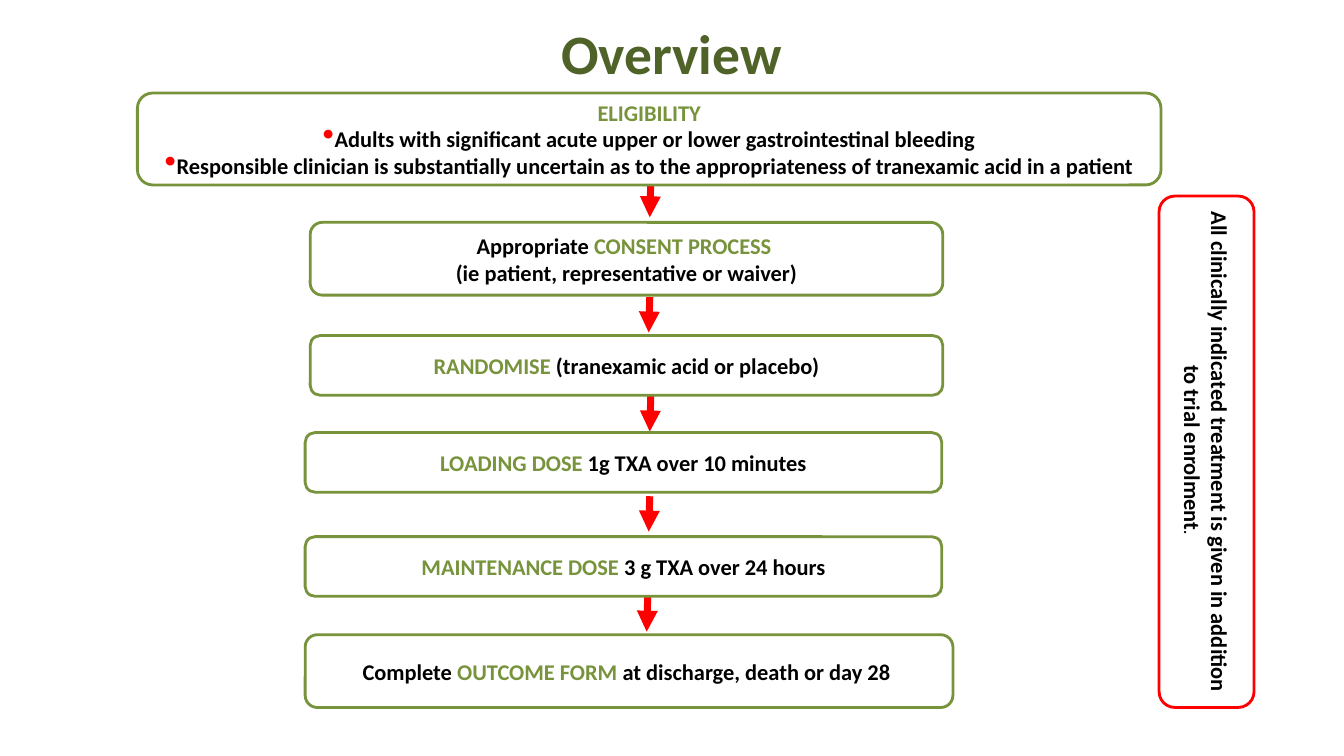
"""Build the trial overview flowchart slide."""
from lxml import etree
from pptx import Presentation, util as u
from pptx.dml.color import RGBColor
from pptx.enum import shapes as s, text as t
from pptx.oxml import ns

GREEN = RGBColor(0x77, 0x93, 0x3C)
DARK = RGBColor(0x4F, 0x62, 0x28)
RED = RGBColor(0xFF, 0, 0)
BLACK = RGBColor(0, 0, 0)
WHITE = RGBColor(0xFF, 0xFF, 0xFF)

deck = Presentation()
deck.slide_width, deck.slide_height = u.Inches(13.3), u.Inches(7.48)
COL, ROW = deck.slide_width / 133, deck.slide_height / 74.8
slide = deck.slides.add_slide(deck.slide_layouts[5])


def write(para, words, size=16, color=BLACK):
    para.alignment = t.PP_ALIGN.CENTER
    run = para.add_run()
    run.text = words
    font = run.font
    font.name, font.size, font.bold = "Calibri", u.Pt(size), True
    font.color.rgb = color


def frame(left, top, wide, high, line=GREEN):
    box = slide.shapes.add_shape(
        s.MSO_SHAPE.ROUNDED_RECTANGLE,
        int(left * COL), int(top * ROW), int(wide * COL), int(high * ROW))
    box.shadow.inherit = False
    box.fill.solid()
    box.fill.fore_color.rgb = WHITE
    box.line.color.rgb = line
    box.line.width = u.Pt(2)
    box.text_frame.word_wrap = True
    box.text_frame.vertical_anchor = t.MSO_ANCHOR.MIDDLE
    return box


title = slide.shapes.title
title.left, title.top = int(6.6 * COL), int(1.1 * ROW)
title.width, title.height = int(119.7 * COL), int(8.1 * ROW)
title.text_frame.vertical_anchor = t.MSO_ANCHOR.MIDDLE
write(title.text_frame.paragraphs[0], "Overview", size=39.6, color=DARK)

ARROWS = [(64.4, 18), (64.3, 29.4), (64.4, 39.2), (64.3, 49.1), (64.1, 59)]
for left, top in ARROWS:
    arrow = slide.shapes.add_connector(
        s.MSO_CONNECTOR.STRAIGHT, int(left * COL), int(top * ROW),
        int((left - 0.1) * COL), int((top + 3.5) * ROW))
    arrow.line.color.rgb = RED
    arrow.line.width = u.Pt(5)
    etree.SubElement(arrow.line._get_or_add_ln(), ns.qn("a:tailEnd"), type="triangle")
    etree.SubElement(arrow._element.spPr, ns.qn("a:effectLst"))

side = frame(94.1, 40, 50.6, 9.4, line=RED)
side.rotation = 90
note = side.text_frame.paragraphs[0]
write(note, "All clinically indicated treatment is given in addition to trial enrolment")
write(note, ". ", size=11)

STEPS = [
    ((30.7, 22, 62.6, 7.2), [("Appropriate ", BLACK), ("CONSENT PROCESS ", GREEN),
                             None, ("(ie patient, representative or waiver)", BLACK)]),
    ((30.7, 33.2, 62.6, 5.9), [("RANDOMISE", GREEN),
                               (" (tranexamic acid or placebo)", BLACK)]),
    ((30.2, 42.8, 63, 5.9), [("LOADING DOSE ", GREEN), ("1g TXA over 10 minutes", BLACK)]),
    ((30.2, 53.1, 63, 5.9), [("MAINTENANCE DOSE", GREEN), (" 3 g TXA over 24 hours", BLACK)]),
    ((30.2, 62.8, 64.1, 7.2), [("Complete ", BLACK), ("OUTCOME FORM", GREEN),
                               (" at discharge, death or day 28 ", BLACK)]),
]
for place, parts in STEPS:
    para = frame(*place).text_frame.paragraphs[0]
    for part in parts:
        if part is None:
            para.add_line_break()
        else:
            write(para, part[0], color=part[1])

entry = frame(13.6, 9.2, 101.3, 9.1).text_frame
write(entry.paragraphs[0], "ELIGIBILITY", color=GREEN)
RULES = [
    "Adults with significant acute upper or lower gastrointestinal bleeding",
    "Responsible clinician is substantially uncertain as to the "
    "appropriateness of tranexamic acid in a patient",
]
for rule in RULES:
    para = entry.add_paragraph()
    write(para, rule)
    props = para._p.get_or_add_pPr()
    props.set("marL", str(int(0.9 * COL)))
    props.set("indent", str(int(-0.9 * COL)))
    tint = etree.SubElement(props, ns.qn("a:buClr"))
    etree.SubElement(tint, ns.qn("a:srgbClr"), val=str(RED))
    etree.SubElement(props, ns.qn("a:buSzPct"), val="150000")
    etree.SubElement(props, ns.qn("a:buChar"), char="•")

deck.save("out.pptx")
